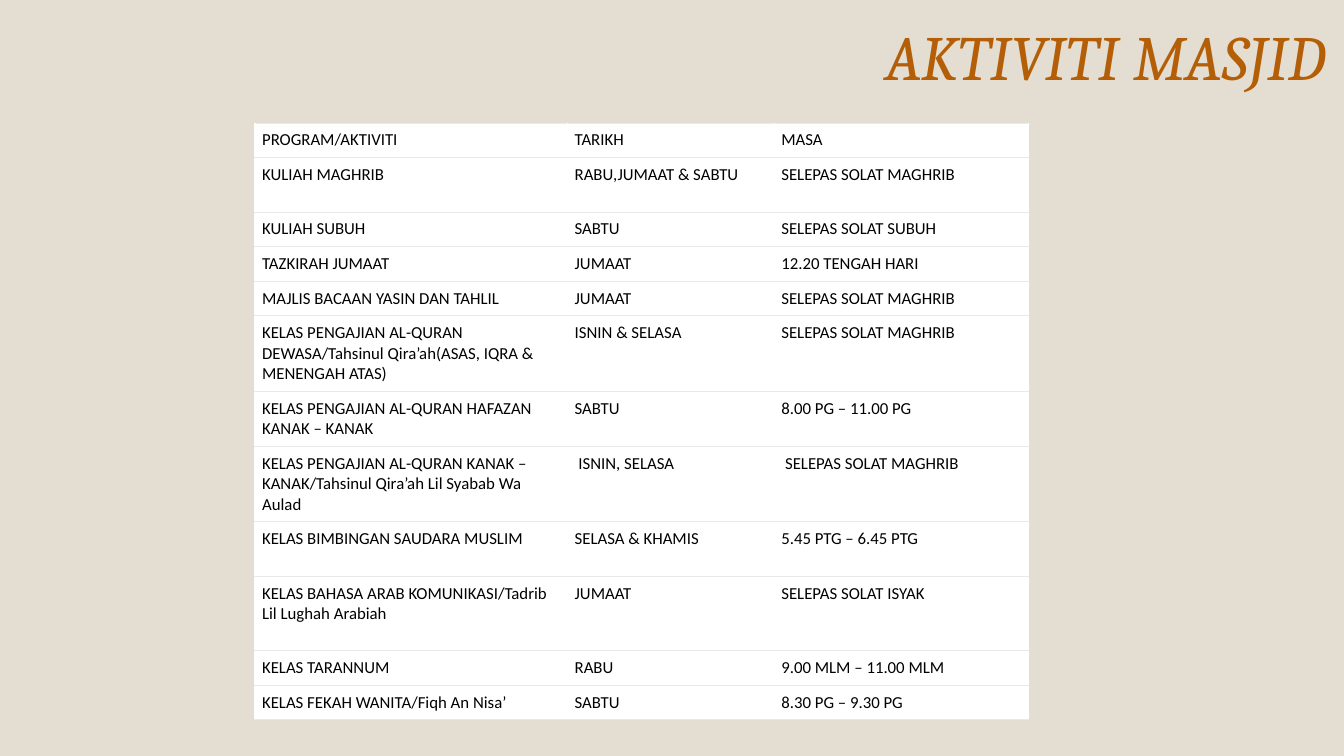
from pptx import Presentation
from pptx.dml.color import RGBColor
from pptx.enum.text import MSO_ANCHOR as Anchor, MSO_AUTO_SIZE as AutoSize, PP_ALIGN as Align
from pptx.oxml import parse_xml
from pptx.oxml.ns import nsdecls
from pptx.util import Inches, Pt

BACKGROUND, ORANGE, WHITE, BLACK, RULE = "E3DED1", "B45F07", "FFFFFF", "000000", "E9E9E9"
COLUMN_WIDTHS = [3.1, 2.05, 2.52]
CELL_INSET, LINE_HEIGHT = 0.07, 0.2

# Height in text lines, then programme, day and time
ACTIVITIES = [
    (1, "PROGRAM/AKTIVITI", "TARIKH", "MASA"),
    (2, "KULIAH MAGHRIB", "RABU,JUMAAT & SABTU", "SELEPAS SOLAT MAGHRIB"),
    (1, "KULIAH SUBUH", "SABTU", "SELEPAS SOLAT SUBUH"),
    (1, "TAZKIRAH JUMAAT", "JUMAAT", "12.20 TENGAH HARI"),
    (1, "MAJLIS BACAAN YASIN DAN TAHLIL", "JUMAAT", "SELEPAS SOLAT MAGHRIB"),
    (3, "KELAS PENGAJIAN AL-QURAN DEWASA/Tahsinul Qira’ah(ASAS, IQRA & MENENGAH ATAS)",
     "ISNIN & SELASA", "SELEPAS SOLAT MAGHRIB"),
    (2, "KELAS PENGAJIAN AL-QURAN HAFAZAN KANAK – KANAK", "SABTU", "8.00 PG – 11.00 PG"),
    (3, "KELAS PENGAJIAN AL-QURAN KANAK – KANAK/Tahsinul Qira’ah Lil Syabab Wa Aulad",
     " ISNIN, SELASA", " SELEPAS SOLAT MAGHRIB"),
    (2, "KELAS BIMBINGAN SAUDARA MUSLIM", "SELASA & KHAMIS", "5.45 PTG – 6.45 PTG"),
    (3, "KELAS BAHASA ARAB KOMUNIKASI/Tadrib Lil Lughah Arabiah", "JUMAAT",
     "SELEPAS SOLAT ISYAK"),
    (1, "KELAS TARANNUM", "RABU", "9.00 MLM – 11.00 MLM"),
    (1, "KELAS FEKAH WANITA/Fiqh An Nisa’", "SABTU", "8.30 PG – 9.30 PG"),
]


def color(hex_code):
    return RGBColor.from_string(hex_code)


def add_span(para, text, font, size, hex_code, italic=False):
    span = para.add_run()
    span.text = text
    span.font.name = font
    span.font.size = Pt(size)
    span.font.bold = False
    span.font.italic = italic
    span.font.color.rgb = color(hex_code)


def fill_title(page, left, top, width, height):
    title = page.shapes.title
    title.left, title.top = Inches(left), Inches(top)
    title.width, title.height = Inches(width), Inches(height)
    frame = title.text_frame
    frame.word_wrap = True
    frame.auto_size = AutoSize.NONE
    frame.vertical_anchor = Anchor.TOP
    para = frame.paragraphs[0]
    para.alignment = Align.RIGHT
    para.line_spacing = 0.9
    add_span(para, "AKTIVITI MASJID", "Cambria", 45, ORANGE, italic=True)


def rule_cell(cell):
    # Thin horizontal rules above and below the cell
    properties = cell._tc.get_or_add_tcPr()
    for side in ("lnT", "lnB"):
        properties.append(parse_xml(
            f'<a:{side} {nsdecls("a")} w="{Pt(0.75)}"><a:solidFill>'
            f'<a:srgbClr val="{RULE}"/></a:solidFill></a:{side}>'))


def fill_cell(cell, text):
    rule_cell(cell)
    cell.fill.solid()
    cell.fill.fore_color.rgb = color(WHITE)
    cell.margin_left = cell.margin_right = Inches(CELL_INSET)
    cell.margin_top = cell.margin_bottom = Inches(CELL_INSET)
    cell.vertical_anchor = Anchor.TOP
    add_span(cell.text_frame.paragraphs[0], text, "Calibri", 12, BLACK)


def add_schedule(page, left, top):
    heights = [2 * CELL_INSET + LINE_HEIGHT * lines for lines, *_ in ACTIVITIES]
    table = page.shapes.add_table(
        len(ACTIVITIES), len(COLUMN_WIDTHS), Inches(left), Inches(top),
        Inches(sum(COLUMN_WIDTHS)), Inches(sum(heights))).table
    table.first_row = table.horz_banding = False
    for column, width in zip(table.columns, COLUMN_WIDTHS):
        column.width = Inches(width)
    for row, height, (_, *texts) in zip(table.rows, heights, ACTIVITIES):
        row.height = Inches(height)
        for cell, text in zip(row.cells, texts):
            fill_cell(cell, text)


def main():
    deck = Presentation()
    deck.slide_width, deck.slide_height = Inches(13.33), Inches(7.5)
    page = deck.slides.add_slide(deck.slide_layouts[5])
    page.background.fill.solid()
    page.background.fill.fore_color.rgb = color(BACKGROUND)
    fill_title(page, 7.17, 0.21, 6.08, 1.17)
    add_schedule(page, 2.53, 1.22)
    deck.save("out.pptx")


if __name__ == "__main__":
    main()
